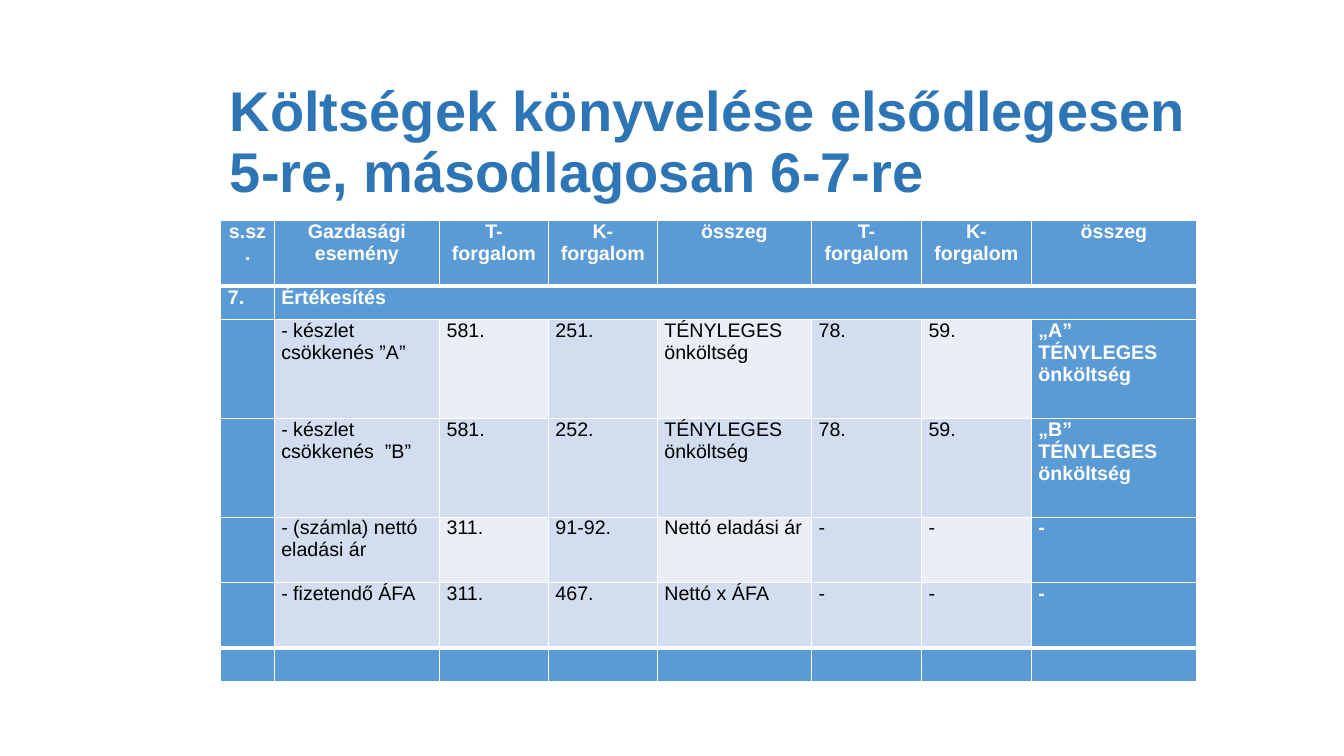
from pptx import Presentation
from pptx.dml.color import RGBColor as RGB
from pptx.enum.text import MSO_ANCHOR as Anchor, PP_ALIGN as Align
from pptx.oxml import parse_xml
from pptx.oxml.ns import nsdecls
from pptx.util import Inches, Pt

HUES = {"title": "2E75B6", "head": "5B9BD5", "band": "D2DEEF",
        "pale": "EAEFF7", "white": "FFFFFF", "black": "000000"}
COLS = [0.53, 1.64, 1.08, 1.08, 1.53, 1.09, 1.09, 1.64]
ROWS = [0.65, 0.33, 0.98, 0.98, 0.65, 0.65, 0.33]
TEXTS = [
    ["s.sz.", "Gazdasági esemény", "T-forgalom", "K-forgalom", "összeg",
     "T-forgalom", "K-forgalom", "összeg"],
    ["7.", "Értékesítés"] + [""] * 6,
    ["", "- készlet csökkenés ”A”", "581.", "251.", "TÉNYLEGES önköltség",
     "78.", "59.", "„A”\vTÉNYLEGES önköltség"],
    ["", "- készlet csökkenés  ”B”", "581.", "252.", "TÉNYLEGES önköltség",
     "78.", "59.", "„B”\vTÉNYLEGES önköltség"],
    ["", "- (számla) nettó eladási ár", "311.", "91-92.", "Nettó eladási ár",
     "-", "-", "-"],
    ["", "- fizetendő ÁFA", "311.", "467.", "Nettó x ÁFA", "-", "-", "-"],
    [""] * 8,
]
LAST_ROW, LAST_COL = len(ROWS) - 1, len(COLS) - 1


def style(font, size, hue, bold):
    font.name, font.size, font.bold = "Arial", Pt(size), bold
    font.color.rgb = RGB.from_string(HUES[hue])


def edge(cell, side, width):
    """Draw one white border; sides must come in the order L, R, T, B."""
    cell._tc.get_or_add_tcPr().append(parse_xml(
        f'<a:ln{side} {nsdecls("a")} w="{Pt(width)}"><a:solidFill>'
        f'<a:srgbClr val="{HUES["white"]}"/></a:solidFill></a:ln{side}>'))


prs = Presentation()
prs.slide_width, prs.slide_height = Inches(13.33), Inches(7.5)
slide = prs.slides.add_slide(prs.slide_layouts[5])

title = slide.shapes.title
title.left, title.top = Inches(2.18), Inches(0.99)
title.width, title.height = Inches(9.92), Inches(0.87)
frame = title.text_frame
frame.text = "Költségek könyvelése elsődlegesen 5-re, másodlagosan 6-7-re"
frame.word_wrap = True
frame.vertical_anchor = Anchor.MIDDLE
para = frame.paragraphs[0]
para.alignment, para.line_spacing = Align.LEFT, 0.9
style(para.font, 40, "title", True)

table = slide.shapes.add_table(
    len(ROWS), len(COLS), Inches(2.19), Inches(2.19),
    Inches(sum(COLS)), Inches(sum(ROWS))).table
for col, width in zip(table.columns, COLS):
    col.width = Inches(width)
for row, height in zip(table.rows, ROWS):
    row.height = Inches(height)

for r, texts in enumerate(TEXTS):
    for c, text in enumerate(texts):
        cell = table.cell(r, c)
        cell.margin_left = cell.margin_right = Inches(0.07)
        cell.margin_top = cell.margin_bottom = 0
        cell.text = text
        body = 1 < r < LAST_ROW and 0 < c < LAST_COL
        para = cell.text_frame.paragraphs[0]
        para.alignment = Align.LEFT if r else Align.CENTER
        style(para.font, 14, "black" if body else "white", not body)

        for side in "LR":
            edge(cell, side, 1)
        edge(cell, "T", 3 if r in (1, LAST_ROW) else 1)
        edge(cell, "B", 3 if r in (0, LAST_ROW - 1) else 1)

        pale = r % 2 == 0 and c % 2 == 0
        hue = "head" if not body else "pale" if pale else "band"
        cell.fill.solid()
        cell.fill.fore_color.rgb = RGB.from_string(HUES[hue])

table.cell(1, 1).merge(table.cell(1, LAST_COL))

prs.save("out.pptx")
